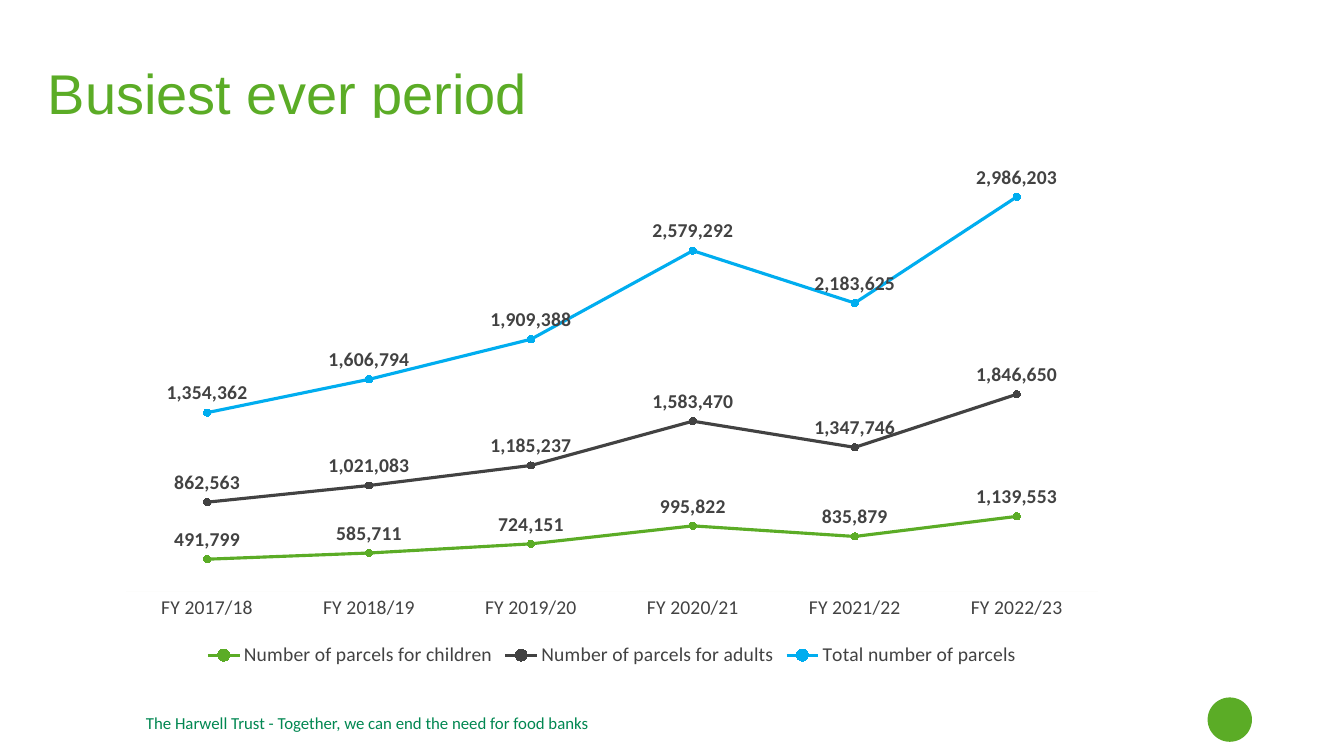
"""Build the slide on the growth in parcel numbers."""
from lxml import etree
from pptx import Presentation
from pptx.chart.data import CategoryChartData
from pptx.dml.color import RGBColor
from pptx.enum import chart as ch, shapes, text
from pptx.oxml import ns
from pptx.util import Pt

TITLE = "Busiest ever period"
FOOT = "The Harwell Trust - Together, we can end the need for food banks"
YEARS = ["FY 2017/18", "FY 2018/19", "FY 2019/20",
         "FY 2020/21", "FY 2021/22", "FY 2022/23"]
GREEN, GREY, WHITE = "5BAC26", "424242", "FFFFFF"
LINES = [
    ("Number of parcels for children", GREEN,
     (491799, 585711, 724151, 995822, 835879, 1139553)),
    ("Number of parcels for adults", GREY,
     (862563, 1021083, 1185237, 1583470, 1347746, 1846650)),
    ("Total number of parcels", "00ADEF",
     (1354362, 1606794, 1909388, 2579292, 2183625, 2986203)),
]
WIDE, HIGH = 722.9, 395.3
PLOT = {"x": 14.5 / WIDE, "y": 7.9 / HIGH, "w": 694 / WIDE, "h": 330.6 / HIGH}
FORM = "#,##0"


def rgb(code):
    return RGBColor.from_string(code)


def paint(fill, code):
    fill.solid()
    fill.fore_color.rgb = rgb(code)


def style(font, size, color=GREY, face="Calibri", bold=False):
    font.size, font.name, font.bold = Pt(size), face, bold
    font.color.rgb = rgb(color)


def write(shape, words, anchor, space=1.0, **form):
    frame = shape.text_frame
    frame.word_wrap = True
    frame.auto_size = text.MSO_AUTO_SIZE.NONE
    frame.vertical_anchor = anchor
    para = frame.paragraphs[0]
    para.alignment = text.PP_ALIGN.LEFT
    para.line_spacing = space
    run = para.add_run()
    run.text = words
    style(run.font, **form)


def place(chart):
    area = chart._chartSpace.chart.plotArea
    for old in area.findall(ns.qn("c:layout")):
        area.remove(old)
    layout = etree.Element(ns.qn("c:layout"))
    manual = etree.SubElement(layout, ns.qn("c:manualLayout"))
    parts = [("layoutTarget", "inner"), ("xMode", "edge"), ("yMode", "edge")]
    for tag, val in parts + list(PLOT.items()):
        etree.SubElement(manual, ns.qn("c:" + tag)).set("val", str(val))
    area.insert(0, layout)


def back(chart, code):
    look = etree.Element(ns.qn("c:spPr"))
    fill = etree.SubElement(look, ns.qn("a:solidFill"))
    etree.SubElement(fill, ns.qn("a:srgbClr")).set("val", code)
    line = etree.SubElement(look, ns.qn("a:ln"))
    etree.SubElement(line, ns.qn("a:noFill"))
    chart._chartSpace.chart.addnext(look)


def draw(slide):
    data = CategoryChartData(number_format=FORM)
    data.categories = YEARS
    for name, _, vals in LINES:
        data.add_series(name, vals)
    chart = slide.shapes.add_chart(
        ch.XL_CHART_TYPE.LINE_MARKERS_STACKED,
        Pt(75.6), Pt(84.24), Pt(WIDE), Pt(HIGH), data).chart
    style(chart.font, 14)
    chart.has_title = False
    chart.has_legend = True
    chart.legend.position = ch.XL_LEGEND_POSITION.BOTTOM
    chart.legend.include_in_layout = False
    style(chart.legend.font, 14)

    cat, val = chart.category_axis, chart.value_axis
    cat.major_tick_mark = cat.minor_tick_mark = ch.XL_TICK_MARK.NONE
    cat.format.line.color.rgb = rgb("FDFDFC")
    cat.format.line.width = Pt(0.75)
    style(cat.tick_labels.font, 14)
    val.visible = val.has_major_gridlines = False
    val.minimum_scale, val.maximum_scale = 0, 7000000

    chart.plots[0].vary_by_categories = False
    for series, (_, color, _) in zip(chart.plots[0].series, LINES):
        series.smooth = False
        series.format.line.color.rgb = rgb(color)
        series.format.line.width = Pt(2.25)
        mark = series.marker
        mark.style, mark.size = ch.XL_MARKER_STYLE.CIRCLE, 5
        paint(mark.format.fill, color)
        mark.format.line.color.rgb = rgb(color)
        labels = series.data_labels
        labels.show_value = True
        labels.position = ch.XL_LABEL_POSITION.ABOVE
        labels.number_format, labels.number_format_is_linked = FORM, False
        style(labels.font, 14, bold=True)
    place(chart)
    back(chart, WHITE)


def main():
    deck = Presentation()
    deck.slide_width, deck.slide_height = Pt(960), Pt(540)
    slide = deck.slides.add_slide(deck.slide_layouts[5])

    dot = slide.shapes.add_shape(
        shapes.MSO_SHAPE.OVAL, Pt(862.6), Pt(498.2), Pt(31.7), Pt(31.7))
    dot.shadow.inherit = False
    paint(dot.fill, GREEN)
    dot.line.fill.background()

    title = slide.shapes.title
    title.left, title.top = Pt(27), Pt(43.9)
    title.width, title.height = Pt(906.5), Pt(104.4)
    write(title, TITLE, text.MSO_ANCHOR.TOP, space=0.9,
          size=40, color=GREEN, face="Arial")

    foot = slide.shapes.add_textbox(Pt(97.2), Pt(507.7), Pt(576), Pt(17.3))
    write(foot, FOOT, text.MSO_ANCHOR.MIDDLE, size=12, color="008751")
    draw(slide)
    deck.save("out.pptx")


if __name__ == "__main__":
    main()
